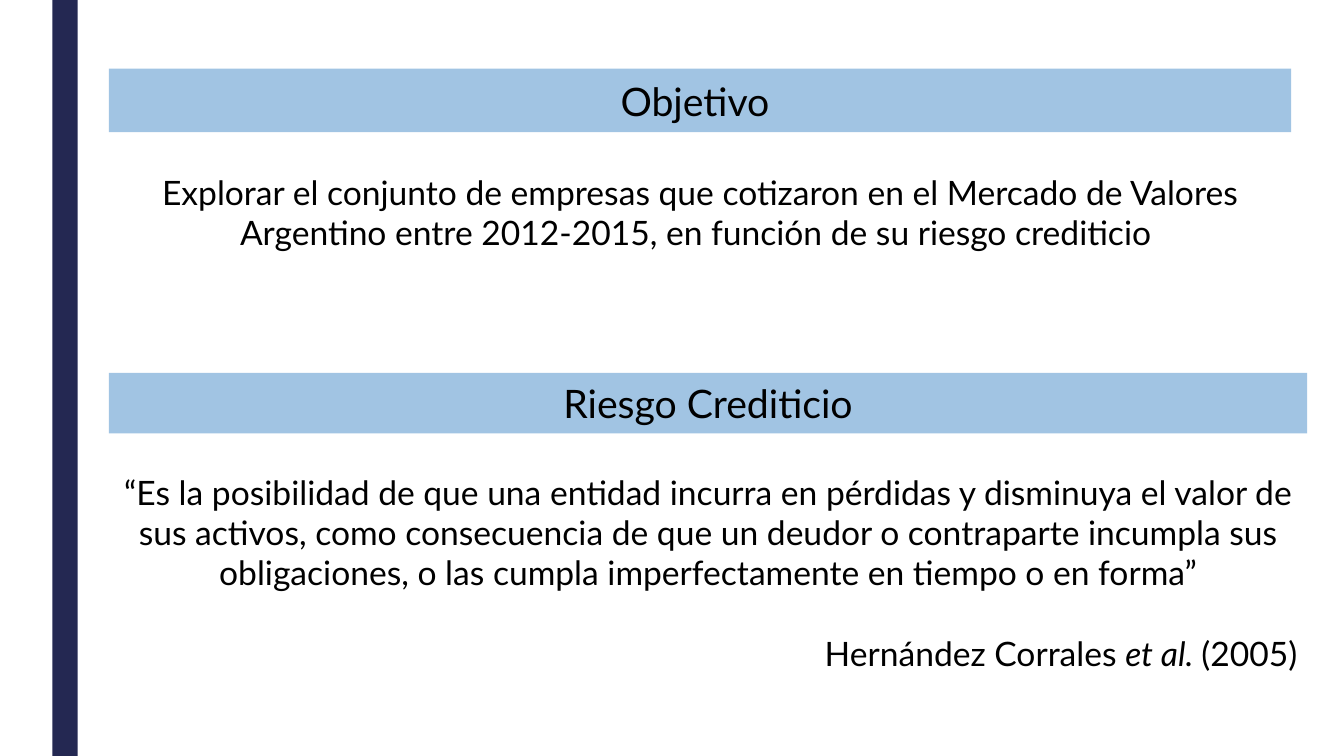
from dataclasses import dataclass

import pptx
import pptx.dml.color
import pptx.enum.shapes
import pptx.enum.text
import pptx.shapes.autoshape
import pptx.slide
import pptx.util

Pt = pptx.util.Pt
RGBColor = pptx.dml.color.RGBColor
ALIGN = pptx.enum.text.PP_ALIGN
MIDDLE = pptx.enum.text.MSO_ANCHOR.MIDDLE
RECTANGLE = pptx.enum.shapes.MSO_SHAPE.RECTANGLE

NAVY = RGBColor(0x24, 0x28, 0x52)
LIGHT_BLUE = RGBColor(0xA1, 0xC4, 0xE3)
BLACK = RGBColor(0, 0, 0)

SLIDE_W, SLIDE_H = 960, 540
LEFT = 77.76
HEADING_SIZE, BODY_SIZE = 28, 24


@dataclass
class Run:
    text: str
    italic: bool = False


@dataclass
class Paragraph:
    runs: list[Run]
    format: dict


@dataclass
class Heading:
    text: str
    top: float
    width: float
    height: float
    spacing: float = 0


@dataclass
class Body:
    paragraphs: list[Paragraph]
    top: float
    width: float
    height: float


HEADINGS = [
    Heading("Objetivo ", 49, 844.5, 45.4, spacing=6),
    Heading("Riesgo Crediticio", 266.4, 856, 43.2),
]

BODIES = [
    Body([Paragraph([Run("Explorar el conjunto de empresas que cotizaron en el Mercado de "
                         "Valores Argentino entre 2012-2015, en función de su riesgo "
                         "crediticio ")], {"alignment": ALIGN.CENTER})],
         123.8, 844.5, 55.4),
    Body([Paragraph([Run("“Es la posibilidad de que una entidad incurra en pérdidas y "
                         "disminuya el valor de sus activos, como consecuencia de que un "
                         "deudor o contraparte incumpla sus obligaciones, o las cumpla "
                         "imperfectamente en tiempo o en forma”")],
                    {"alignment": ALIGN.CENTER}),
          Paragraph([Run("Hernández Corrales "), Run("et al. ", italic=True), Run("(2005)")],
                    {"alignment": ALIGN.RIGHT, "space_before": Pt(28.8)})],
         332.6, 856, 152.6),
]


def apply(target: object, values: dict) -> None:
    for name, value in values.items():
        setattr(target, name, value)


def add_bar(s: pptx.slide.Slide, left: float, top: float, width: float, height: float,
            color: RGBColor) -> pptx.shapes.autoshape.Shape:
    sp = s.shapes.add_shape(RECTANGLE, Pt(left), Pt(top), Pt(width), Pt(height))
    sp.shadow.inherit = False
    sp.fill.solid()
    sp.fill.fore_color.rgb = color
    sp.line.fill.background()
    return sp


def write(sp: pptx.shapes.autoshape.Shape, paragraphs: list[Paragraph], size: int,
          wrap: bool) -> None:
    tf = sp.text_frame
    apply(tf, {"word_wrap": wrap, "vertical_anchor": MIDDLE})
    for i, paragraph in enumerate(paragraphs):
        p = tf.add_paragraph() if i else tf.paragraphs[0]
        apply(p, paragraph.format)
        for run in paragraph.runs:
            r = p.add_run()
            r.text = run.text
            apply(r.font, {"name": "Lato", "size": Pt(size), "italic": run.italic})
            r.font.color.rgb = BLACK


def add_heading(s: pptx.slide.Slide, heading: Heading) -> None:
    sp = add_bar(s, LEFT, heading.top, heading.width, heading.height, LIGHT_BLUE)
    gap = Pt(heading.spacing)
    layout = {"alignment": ALIGN.CENTER, "space_before": gap, "space_after": gap}
    write(sp, [Paragraph([Run(heading.text)], layout)], HEADING_SIZE, wrap=False)


def add_body(s: pptx.slide.Slide, body: Body) -> None:
    sp = s.shapes.add_textbox(Pt(LEFT), Pt(body.top), Pt(body.width), Pt(body.height))
    write(sp, body.paragraphs, BODY_SIZE, wrap=True)


def main() -> None:
    prs = pptx.Presentation()
    apply(prs, {"slide_width": Pt(SLIDE_W), "slide_height": Pt(SLIDE_H)})
    s = prs.slides.add_slide(prs.slide_layouts[6])
    add_bar(s, 37.4, 0, 18, SLIDE_H, NAVY)
    for heading, body in zip(HEADINGS, BODIES):
        add_heading(s, heading)
        add_body(s, body)
    prs.save("out.pptx")


if __name__ == "__main__":
    main()
